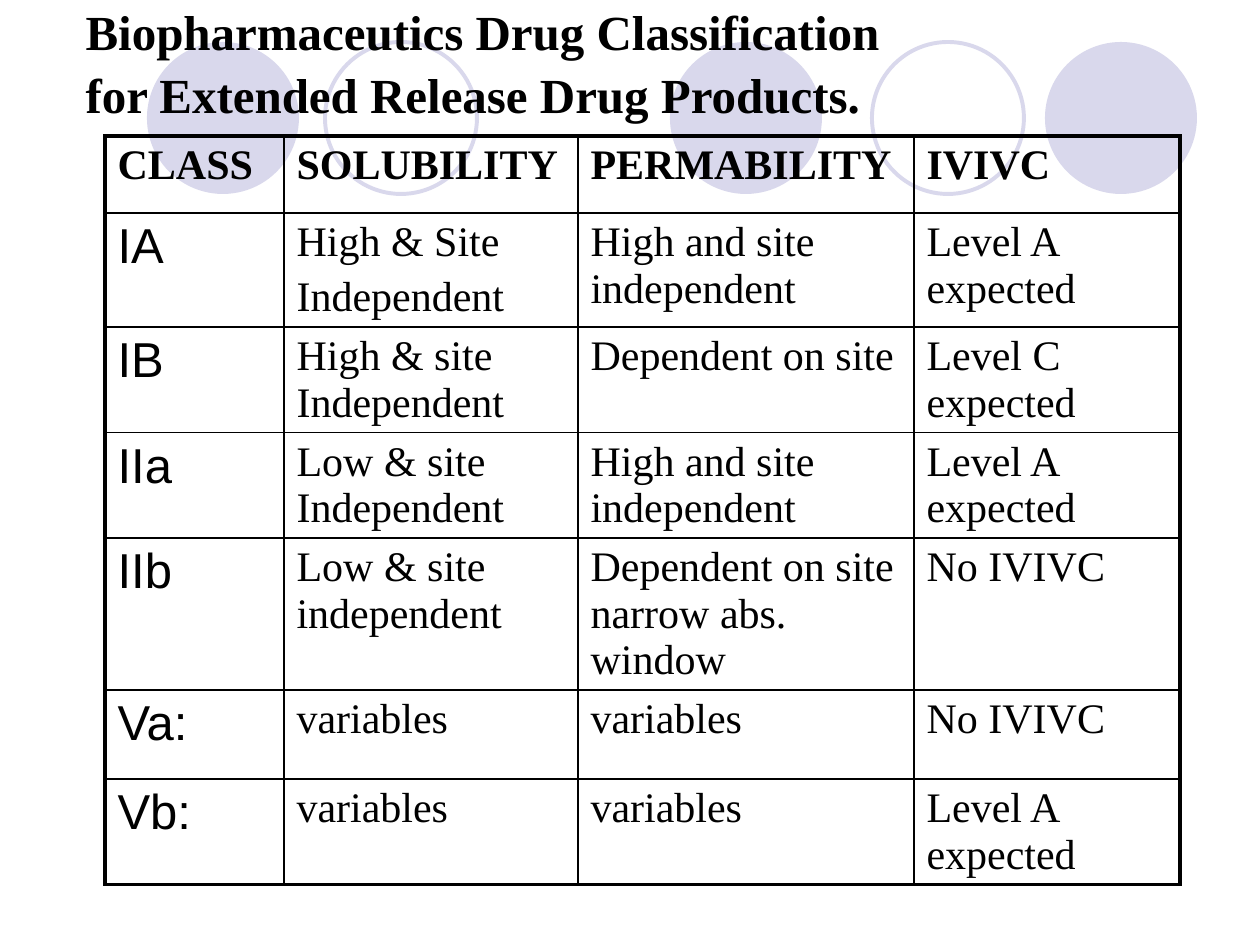
from dataclasses import dataclass

from lxml.etree import SubElement
from pptx import Presentation
from pptx.dml.color import RGBColor
from pptx.enum.shapes import MSO_SHAPE
from pptx.enum.text import MSO_ANCHOR, MSO_AUTO_SIZE, PP_ALIGN
from pptx.oxml.ns import qn
from pptx.util import Emu, Pt

PX_PER_INCH = 126


def px(length):
    return Emu(round(length * 914400 / PX_PER_INCH))


@dataclass(frozen=True)
class Theme:
    ink: str = "000000"
    circle: str = "D9D8EC"
    serif: str = "Times New Roman"
    sans: str = "Arial"
    large: float = 28
    body: float = 24
    outer_line: float = 2.25
    inner_line: float = 1


class SlideBuilder:
    def __init__(self, slide, theme):
        self.slide = slide
        self.theme = theme

    def format_runs(self, paragraph, font_name, size, bold):
        for run in paragraph.runs:
            run.font.name = font_name
            run.font.size = Pt(size)
            run.font.bold = bold
            run.font.color.rgb = RGBColor.from_string(self.theme.ink)

    def circle(self, left, top, diameter, filled):
        shape = self.slide.shapes.add_shape(
            MSO_SHAPE.OVAL, px(left), px(top), px(diameter), px(diameter))
        shape.shadow.inherit = False
        color = RGBColor.from_string(self.theme.circle)
        if filled:
            shape.fill.solid()
            shape.fill.fore_color.rgb = color
            shape.line.fill.background()
        else:
            shape.fill.background()
            shape.line.color.rgb = color
            shape.line.width = Pt(self.theme.outer_line)

    def title(self, text, left, top, width, height):
        shape = self.slide.shapes.title
        shape.left, shape.top = px(left), px(top)
        shape.width, shape.height = px(width), px(height)
        text_frame = shape.text_frame
        text_frame.text = text
        text_frame.word_wrap = True
        text_frame.auto_size = MSO_AUTO_SIZE.SHAPE_TO_FIT_TEXT
        text_frame.vertical_anchor = MSO_ANCHOR.BOTTOM
        for paragraph in text_frame.paragraphs:
            paragraph.alignment = PP_ALIGN.LEFT
            paragraph.line_spacing = 1.08
            self.format_runs(paragraph, self.theme.serif, self.theme.large, True)
        self.slide.shapes._spTree.append(shape._element)

    def table(self, rows, left, top, column_widths, row_heights, height):
        shape = self.slide.shapes.add_table(
            len(rows), len(column_widths), px(left), px(top),
            px(sum(column_widths)), px(height))
        table = shape.table
        table.first_row = table.horz_banding = False
        for column, width in zip(table.columns, column_widths):
            column.width = px(width)
        for row, row_height in zip(table.rows, row_heights):
            row.height = px(row_height)
        shape.height = px(height)
        last_row, last_column = len(rows) - 1, len(column_widths) - 1
        for r, texts in enumerate(rows):
            for c, text in enumerate(texts):
                cell = table.cell(r, c)
                self.borders(cell, {"lnL": c == 0, "lnR": c == last_column,
                                    "lnT": r == 0, "lnB": r == last_row})
                cell.fill.background()
                self.cell_text(cell, text, header=r == 0, label=r > 0 and c == 0)

    def cell_text(self, cell, text, header, label):
        theme = self.theme
        font_name = theme.sans if label else theme.serif
        size = theme.large if label else theme.body
        cell.text_frame.text = text
        for paragraph in cell.text_frame.paragraphs:
            spacing = SubElement(paragraph._p.get_or_add_pPr(), qn("a:spcBef"))
            SubElement(spacing, qn("a:spcPct"), val="20000")
            self.format_runs(paragraph, font_name, size, header)

    def borders(self, cell, outer_sides):
        properties = cell._tc.get_or_add_tcPr()
        for side, is_outer in outer_sides.items():
            width = self.theme.outer_line if is_outer else self.theme.inner_line
            line = SubElement(properties, qn(f"a:{side}"), w=str(Pt(width)))
            fill = SubElement(line, qn("a:solidFill"))
            SubElement(fill, qn("a:srgbClr"), val=self.theme.ink)


CIRCLES = [(670, True), (1045, True), (147, True), (872, False), (325, False)]

DRUG_CLASSES = [
    ("CLASS", "SOLUBILITY", "PERMABILITY", "IVIVC"),
    ("IA", "High & Site\nIndependent", "High and site independent", "Level A expected"),
    ("IB", "High & site Independent", "Dependent on site", "Level C expected"),
    ("IIa", "Low & site Independent", "High and site independent", "Level A expected"),
    ("IIb", "Low & site independent", "Dependent on site narrow abs. window", "No IVIVC"),
    ("Va:", "variables", "variables", "No IVIVC"),
    ("Vb:", "variables", "variables", "Level A expected"),
]


def main():
    presentation = Presentation()
    presentation.slide_width, presentation.slide_height = px(1260), px(945)
    slide = presentation.slides.add_slide(presentation.slide_layouts[5])
    builder = SlideBuilder(slide, Theme())
    for left, filled in CIRCLES:
        builder.circle(left, 42, 152, filled)
    builder.table(DRUG_CLASSES, 105, 136, [179, 294, 336, 266],
                  [77, 98, 100, 98, 100, 89, 100], 794)
    builder.title("Biopharmaceutics Drug Classification\n"
                  "for Extended Release Drug Products.", 73, 0, 1061, 130)
    presentation.save("out.pptx")


if __name__ == "__main__":
    main()
